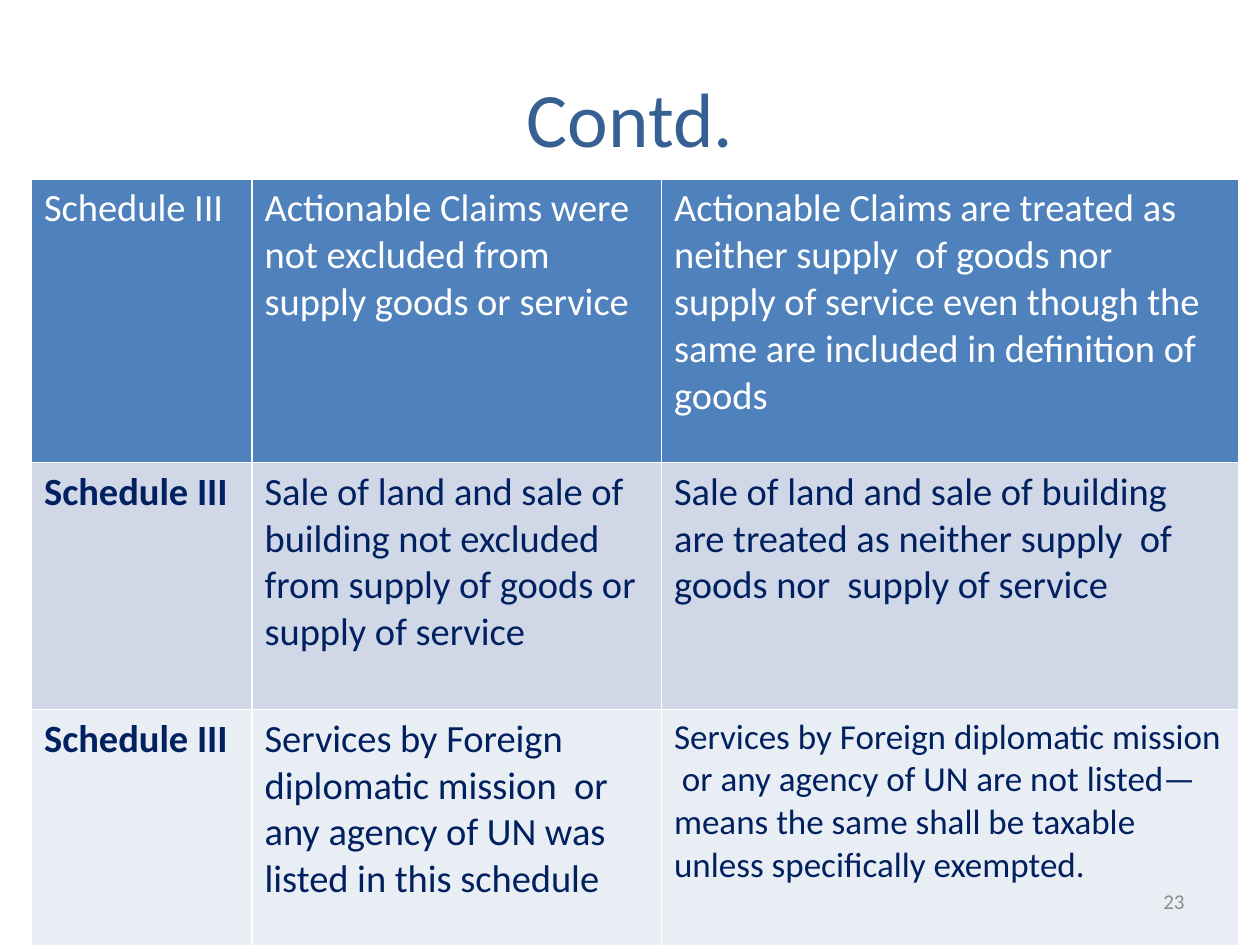
"""Build the slide that compares the Schedule III entries."""
from dataclasses import dataclass

from pptx import Presentation
from pptx.dml.color import RGBColor
from pptx.enum.text import MSO_ANCHOR, PP_ALIGN
from pptx.util import Inches, Pt


@dataclass(frozen=True)
class Theme:
    font: str = "Calibri"
    title: str = "376092"
    head: str = "FFFFFF"
    body: str = "002060"
    note: str = "8C8C8C"
    fills: tuple = ("4F81BD", "D0D8E8", "E9EDF4")
    big: int = 44
    mid: int = 22
    low: int = 20
    tiny: int = 12


THEME = Theme()
TITLE = "Contd."
PAGE = "23"
LABEL = "Schedule III"
ROWS = [
    (LABEL,
     "Actionable Claims were not excluded from supply goods or service",
     "Actionable Claims are treated as neither supply  of goods nor  supply of service "
     "even though the same are included in definition of goods"),
    (LABEL,
     "Sale of land and sale of building not excluded from supply of goods or supply of service",
     "Sale of land and sale of building are treated as neither supply  of goods nor  "
     "supply of service"),
    (LABEL,
     "Services by Foreign diplomatic mission  or any agency of UN was listed in this schedule",
     "Services by Foreign diplomatic mission  or any agency of UN are not listed—means "
     "the same shall be taxable unless specifically exempted."),
]
SMALL = {(2, 2)}
WIDTHS = (1.75, 3.25, 4.58)
HEIGHTS = (2.25, 1.96, 1.9)


def write(frame, text, size, color, bold=False, align=None):
    """Add one styled run to the first paragraph."""
    para = frame.paragraphs[0]
    para.alignment = align
    run = para.add_run()
    run.text = text
    font = run.font
    font.name, font.size, font.bold = THEME.font, Pt(size), bold
    font.color.rgb = RGBColor.from_string(color)


def add_title(slide):
    """Place and fill the title."""
    title = slide.shapes.title
    title.left, title.top, title.width, title.height = map(Inches, (0.5, 0.3, 9, 1.25))
    title.text_frame.vertical_anchor = MSO_ANCHOR.MIDDLE
    write(title.text_frame, TITLE, THEME.big, THEME.title, align=PP_ALIGN.CENTER)


def add_grid(slide):
    """Draw the table of entries."""
    box = map(Inches, (0.25, 1.42, sum(WIDTHS), sum(HEIGHTS)))
    table = slide.shapes.add_table(len(ROWS), len(WIDTHS), *box).table
    for col, width in zip(table.columns, WIDTHS):
        col.width = Inches(width)
    for r, (texts, height) in enumerate(zip(ROWS, HEIGHTS)):
        table.rows[r].height = Inches(height)
        for c, text in enumerate(texts):
            cell = table.cell(r, c)
            cell.fill.solid()
            cell.fill.fore_color.rgb = RGBColor.from_string(THEME.fills[r])
            size = THEME.low if (r, c) in SMALL else THEME.mid
            color = THEME.body if r else THEME.head
            write(cell.text_frame, text, size, color, bold=r > 0 and c == 0)


def add_page(slide):
    """Place the page number."""
    box = slide.shapes.add_textbox(*map(Inches, (7.17, 6.95, 2.33, 0.4)))
    frame = box.text_frame
    frame.word_wrap = True
    frame.vertical_anchor = MSO_ANCHOR.MIDDLE
    write(frame, PAGE, THEME.tiny, THEME.note, align=PP_ALIGN.RIGHT)


def main():
    """Build and save the deck."""
    deck = Presentation()
    deck.slide_width, deck.slide_height = Inches(10), Inches(7.5)
    slide = deck.slides.add_slide(deck.slide_layouts.get_by_name("Title Only"))
    add_title(slide)
    add_grid(slide)
    add_page(slide)
    deck.save("out.pptx")


if __name__ == "__main__":
    main()
